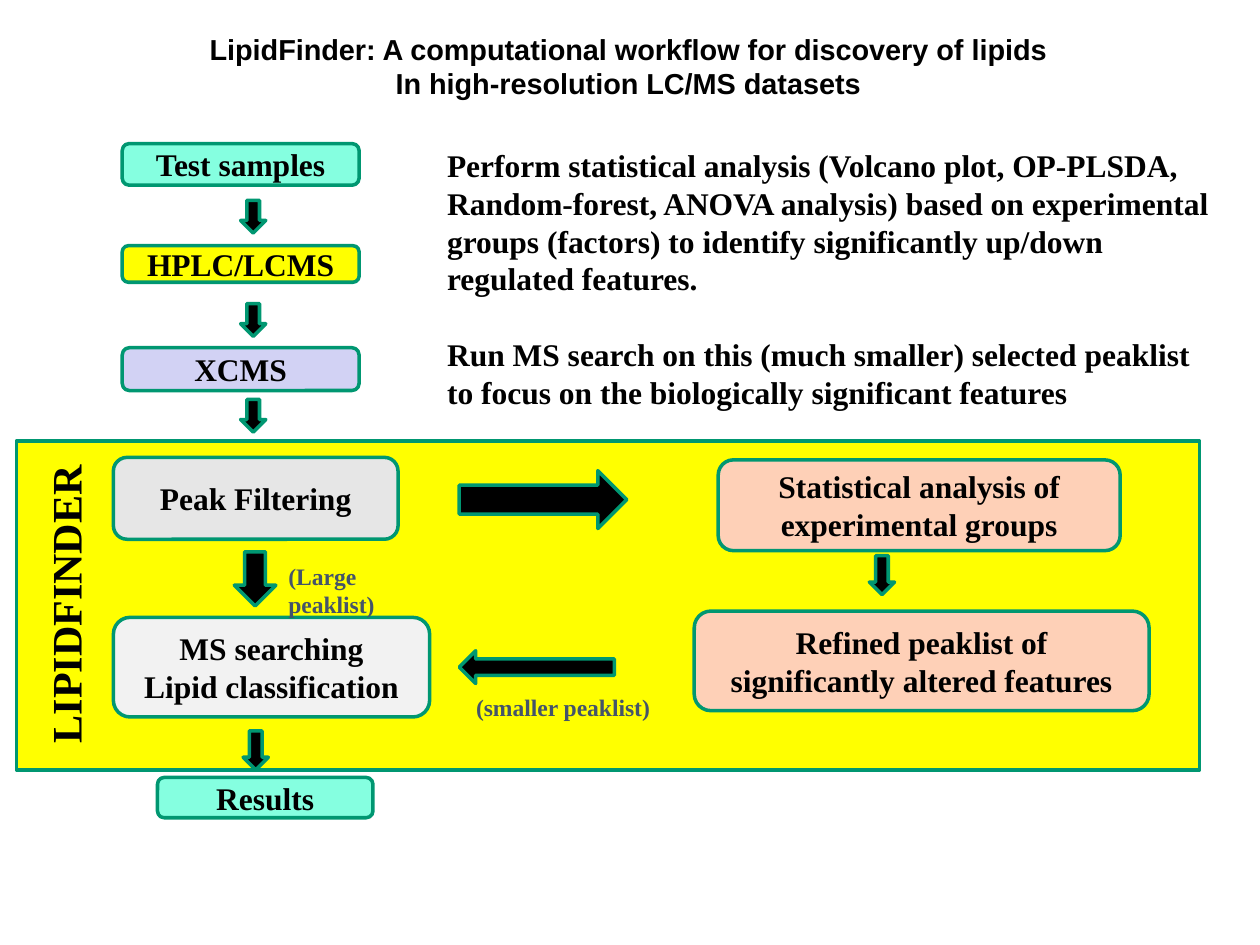
"""Build the LipidFinder workflow slide."""
from lxml.etree import SubElement
from pptx import Presentation
from pptx.dml.color import RGBColor
from pptx.enum.shapes import MSO_SHAPE as SHAPE
from pptx.enum.text import MSO_ANCHOR as ANCHOR, MSO_AUTO_SIZE as FIT, PP_ALIGN as ALIGN
from pptx.oxml.ns import qn
from pptx.util import Pt

PX = 914400 // 100
SERIF, SANS = "Times New Roman", "Arial"
COLORS = {
    "black": "000000", "edge": "009771", "yellow": "FFFF00", "mint": "85FFE0",
    "lilac": "D2D2F4", "grey": "E6E6E6", "pale": "F2F2F2", "pink": "FEBEFE", "slate": "44546A",
}
OPACITY = {"pink": 72}

TITLE = ["LipidFinder: A computational workflow for discovery of lipids",
         "In high-resolution LC/MS datasets"]
TITLE_AREA = (123, 21, 751, 63)
PANEL_AREA = (13, 350, 939, 261)
STEPS = [
    (["Test samples"], "mint", (97, 114, 188, 33)),
    (["HPLC/LCMS"], "yellow", (97, 195, 188, 29)),
    (["XCMS"], "lilac", (97, 276, 188, 34)),
    (["Peak Filtering"], "grey", (90, 363, 226, 65)),
    (["MS searching", "Lipid classification"], "pale", (90, 490, 251, 79)),
    (["Results"], "mint", (125, 617, 171, 32)),
    (["Statistical analysis of experimental groups"], "pink", (570, 365, 319, 72)),
    (["Refined peaklist of", "significantly altered features"], "pink", (551, 485, 361, 79)),
]
ARROWS = [
    ((191, 159, 20, 26), 0),
    ((191, 241, 20, 26), 0),
    ((191, 317, 20, 26), 0),
    ((186, 438, 33, 43), 0),
    ((193, 580, 20, 31), 0),
    ((690, 441, 20, 31), 0),
    ((408, 330, 46, 133), 270),
    ((413, 468, 26, 123), 90),
]
NOTES = [
    (["LIPIDFINDER"], 24, "black", (-79, 444, 261, 50), 270),
    (["(Large peaklist)"], 13.5, "slate", (219, 441, 144, 33), 0),
    (["(smaller peaklist)"], 13.5, "slate", (368, 545, 160, 33), 0),
    (["Perform statistical analysis (Volcano plot, OP-PLSDA, Random-forest, ANOVA analysis) "
      "based on experimental groups (factors) to identify significantly up/down regulated features.",
      "Run MS search on this (much smaller) selected peaklist to focus on the biologically "
      "significant features"], 18, "black", (345, 111, 630, 222), 0),
]
NOTE_GAP = Pt(21.6)


def scaled(area):
    return [value * PX for value in area]


def rgb(color):
    return RGBColor.from_string(COLORS[color])


def write(frame, lines, size, color="black", font=SERIF, align=ALIGN.CENTER, gap=0):
    frame.text = "\n".join(lines)
    frame.word_wrap = True
    for index, paragraph in enumerate(frame.paragraphs):
        paragraph.alignment = align
        if index and gap:
            paragraph.space_before = gap
        for run in paragraph.runs:
            run.font.name, run.font.size, run.font.bold = font, Pt(size), True
            run.font.color.rgb = rgb(color)


def add_block(slide, kind, area, color, turn=0):
    block = slide.shapes.add_shape(kind, *scaled(area))
    block.shadow.inherit = False
    block.rotation = turn
    block.fill.solid()
    block.fill.fore_color.rgb = rgb(color)
    block.line.color.rgb = rgb("edge")
    block.line.width = Pt(2)
    if color in OPACITY:
        tint = block.fill._xPr.find(qn("a:solidFill"))[0]
        SubElement(tint, qn("a:alpha")).set("val", str(OPACITY[color] * 1000))
    return block


def add_title(slide):
    title = slide.shapes.title
    title.left, title.top, title.width, title.height = scaled(TITLE_AREA)
    frame = title.text_frame
    write(frame, TITLE, 16.5, font=SANS)
    frame.auto_size = FIT.NONE
    frame.vertical_anchor = ANCHOR.MIDDLE
    frame.margin_left = frame.margin_right = 7 * PX
    frame.margin_top = frame.margin_bottom = 4 * PX


def main():
    deck = Presentation()
    deck.slide_width, deck.slide_height = scaled((1000, 750))
    slide = deck.slides.add_slide(deck.slide_layouts[5])
    add_title(slide)
    add_block(slide, SHAPE.RECTANGLE, PANEL_AREA, "yellow")
    for lines, color, area in STEPS:
        step = add_block(slide, SHAPE.ROUNDED_RECTANGLE, area, color)
        write(step.text_frame, lines, 18)
        step.text_frame.vertical_anchor = ANCHOR.MIDDLE
    for area, turn in ARROWS:
        add_block(slide, SHAPE.DOWN_ARROW, area, "black", turn)
    for lines, size, color, area, turn in NOTES:
        note = slide.shapes.add_textbox(*scaled(area))
        note.rotation = turn
        write(note.text_frame, lines, size, color, align=ALIGN.LEFT, gap=NOTE_GAP)
    deck.save("out.pptx")


if __name__ == "__main__":
    main()
